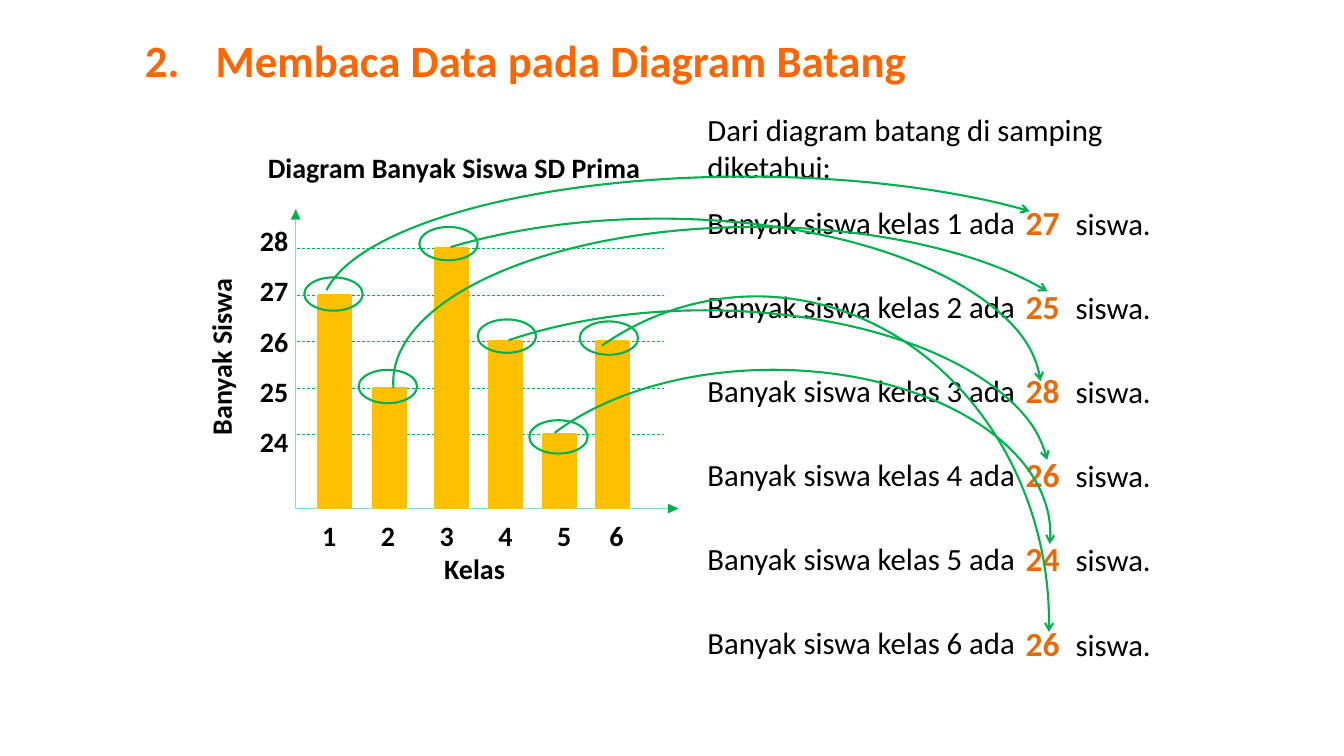
from lxml.etree import SubElement
from pptx import Presentation
from pptx.dml.color import RGBColor
from pptx.enum.dml import MSO_LINE_DASH_STYLE as Dash
from pptx.enum.shapes import MSO_CONNECTOR as Connector, MSO_SHAPE as Shape
from pptx.enum.text import MSO_ANCHOR as Anchor, MSO_AUTO_SIZE as AutoSize, PP_ALIGN as Align
from pptx.oxml.ns import qn
from pptx.util import Cm, Pt

BLACK = RGBColor(0x00, 0x00, 0x00)
GREEN = RGBColor(0x00, 0xB0, 0x50)
GOLD = RGBColor(0xFF, 0xC0, 0x00)
ORANGE = RGBColor(0xFF, 0x66, 0x00)
RUST = RGBColor(0xE4, 0x6C, 0x0A)

TOP_VALUE, LOW_VALUE = 28, 24
TOP_LINE, LINE_STEP = 6.27, 1.17
BASELINE = 12.78
ROW_TOP, ROW_STEP = 5.0, 2.12

STUDENTS = [27, 25, 28, 26, 24, 26]
BAR_LEFTS = [8.03, 9.42, 10.97, 12.34, 13.69, 15.04]
RINGS = [(7.67, 6.99), (9.04, 9.32), (10.57, 5.72),
         (12.04, 8.05), (13.34, 10.59), (14.61, 8.1)]
ARCS = [
    ((8.1, 4.45, 21.39, 6.78), (182.85, 340.61)),
    ((9.91, 5.72, 18.21, 7.82), (179.07, 342.79)),
    ((7.04, 5.51, 19.2, 8.69), (214.48, 358.52)),
    ((9.09, 7.82, 17.35, 8.46), (215.08, 356.96)),
    ((12.5, 9.32, 13.97, 8.26), (204.79, 2.14)),
    ((11.68, 7.47, 14.76, 16.51), (241.03, 1.55)),
]


def add_span(para, text, size=20, color=BLACK, bold=False, font="Calibri"):
    """Append a formatted run to a paragraph."""
    span = para.add_run()
    span.text = text
    span.font.name = font
    span.font.size = Pt(size)
    span.font.bold = bold
    span.font.color.rgb = color


def add_tabs(para, stops):
    """Give a paragraph left tab stops, in centimetres."""
    tabs = SubElement(para._p.get_or_add_pPr(), qn("a:tabLst"))
    for stop in stops:
        SubElement(tabs, qn("a:tab"), pos=str(Cm(stop)), algn="l")


def value_height(value):
    """Return the height on the page of a value on the vertical axis."""
    return TOP_LINE + LINE_STEP * (TOP_VALUE - value)


class Painter:
    """Draw the elements of one page in a shared style."""

    def __init__(self, deck):
        """Add a title-only page to the deck."""
        self.page = deck.slides.add_slide(deck.slide_layouts[5])

    def title(self, area, text, tab):
        """Place and format the title."""
        box = self.page.shapes.title
        box.left, box.top, box.width, box.height = map(Cm, area)
        frame = box.text_frame
        frame.word_wrap = True
        frame.auto_size = AutoSize.SHAPE_TO_FIT_TEXT
        frame.vertical_anchor = Anchor.TOP
        para = frame.paragraphs[0]
        para.alignment = Align.LEFT
        add_tabs(para, [tab])
        add_span(para, text, size=32, color=ORANGE, bold=True)

    def text(self, area, *lines, align=Align.LEFT, spacing=None, tabs=(), turn=0, **style):
        """Add a text box; each line is a string or a list of styled parts."""
        box = self.page.shapes.add_textbox(*map(Cm, area))
        box.rotation = turn
        frame = box.text_frame
        frame.word_wrap = True
        frame.auto_size = AutoSize.SHAPE_TO_FIT_TEXT
        for number, line in enumerate(lines):
            para = frame.add_paragraph() if number else frame.paragraphs[0]
            para.alignment = align
            if spacing:
                para.line_spacing = spacing
            if tabs and number == 0:
                add_tabs(para, tabs)
            parts = [(line, style)] if isinstance(line, str) else line
            for words, look in parts:
                add_span(para, words, **look)
        return box

    def shape(self, kind, area, fill=None, line=GREEN, width=1.5):
        """Add a preset shape, hollow unless it has a fill."""
        shape = self.page.shapes.add_shape(kind, *map(Cm, area))
        shape.shadow.inherit = False
        if fill is None:
            shape.fill.background()
        else:
            shape.fill.solid()
            shape.fill.fore_color.rgb = fill
        shape.line.color.rgb = line
        shape.line.width = Pt(width)
        return shape

    def arc(self, area, angles):
        """Add a curved arrow between two angles in degrees."""
        arc = self.shape(Shape.ARC, area)
        for number, angle in enumerate(angles):
            arc.adjustments[number] = angle * 0.6
        SubElement(arc.line._get_or_add_ln(), qn("a:tailEnd"), type="arrow")

    def axes(self, area):
        """Add the two joined axis arrows."""
        axes = self.shape(Shape.LEFT_UP_ARROW, area, fill=GREEN, width=0.25)
        for number, amount in enumerate((0, 0.015, 0.033)):
            axes.adjustments[number] = amount
        axes.element.spPr.find(qn("a:xfrm")).set("flipH", "1")

    def grid_line(self, left, right, height):
        """Add a dashed horizontal line."""
        line = self.page.shapes.add_connector(
            Connector.STRAIGHT, Cm(left), Cm(height), Cm(right), Cm(height))
        line.line.color.rgb = GREEN
        line.line.width = Pt(0.5)
        line.line.dash_style = Dash.DASH
        SubElement(line.element.spPr, qn("a:effectLst"))


def draw_diagram(painter):
    """Draw the bar diagram with its labels."""
    values = range(TOP_VALUE, LOW_VALUE - 1, -1)
    for value in values:
        painter.grid_line(7.49, 16.74, value_height(value))
    painter.axes((7.34, 5.28, 9.75, 7.65))
    painter.text((6.5, 3.68, 9.91, 1.12), "Diagram Banyak Siswa SD Prima", bold=True)
    painter.text((6.3, 5.08, 1.47, 6.53), *map(str, values), spacing=1.5, bold=True)
    painter.text((3.25, 8.33, 4.65, 1.12), "Banyak Siswa", turn=270, bold=True)
    classes = painter.text((7.87, 12.93, 8.18, 1.96), "1\t2\t3\t4\t5\t6", "Kelas",
                           align=Align.CENTER, tabs=(1.48, 2.96, 4.44, 5.92, 7.24), bold=True)
    classes.text_frame.paragraphs[0].alignment = Align.LEFT
    for left, value in zip(BAR_LEFTS, STUDENTS):
        top = value_height(value)
        painter.shape(Shape.RECTANGLE, (left, top, 0.81, BASELINE - top),
                      fill=GOLD, line=GOLD, width=2)


def draw_readings(painter):
    """Write the value of each class and link it to its bar."""
    painter.text((17.58, 2.67, 12.07, 2.13),
                 "Dari diagram batang di samping diketahui:", size=22)
    for number, value in enumerate(STUDENTS):
        top = ROW_TOP + ROW_STEP * number
        painter.text((17.58, top, 8.38, 1.19), f"Banyak siswa kelas {number + 1} ada", size=22)
        answer = [(f"{value}\t", {"size": 24, "color": RUST, "bold": True}),
                  ("siswa.", {"size": 22})]
        painter.text((25.6, top - 0.04, 4.01, 1.27), answer, tabs=[1.26])
    for corner, (area, angles) in zip(RINGS, ARCS):
        painter.shape(Shape.OVAL, (*corner, 1.47, 0.84))
        painter.arc(area, angles)


def main():
    """Build the deck and save it."""
    deck = Presentation()
    deck.slide_width, deck.slide_height = Cm(33.87), Cm(19.05)
    painter = Painter(deck)
    painter.title((3.4, 0.69, 20, 1.63), "2.\tMembaca Data pada Diagram Batang", tab=1.78)
    draw_diagram(painter)
    draw_readings(painter)
    deck.save("out.pptx")


if __name__ == "__main__":
    main()
